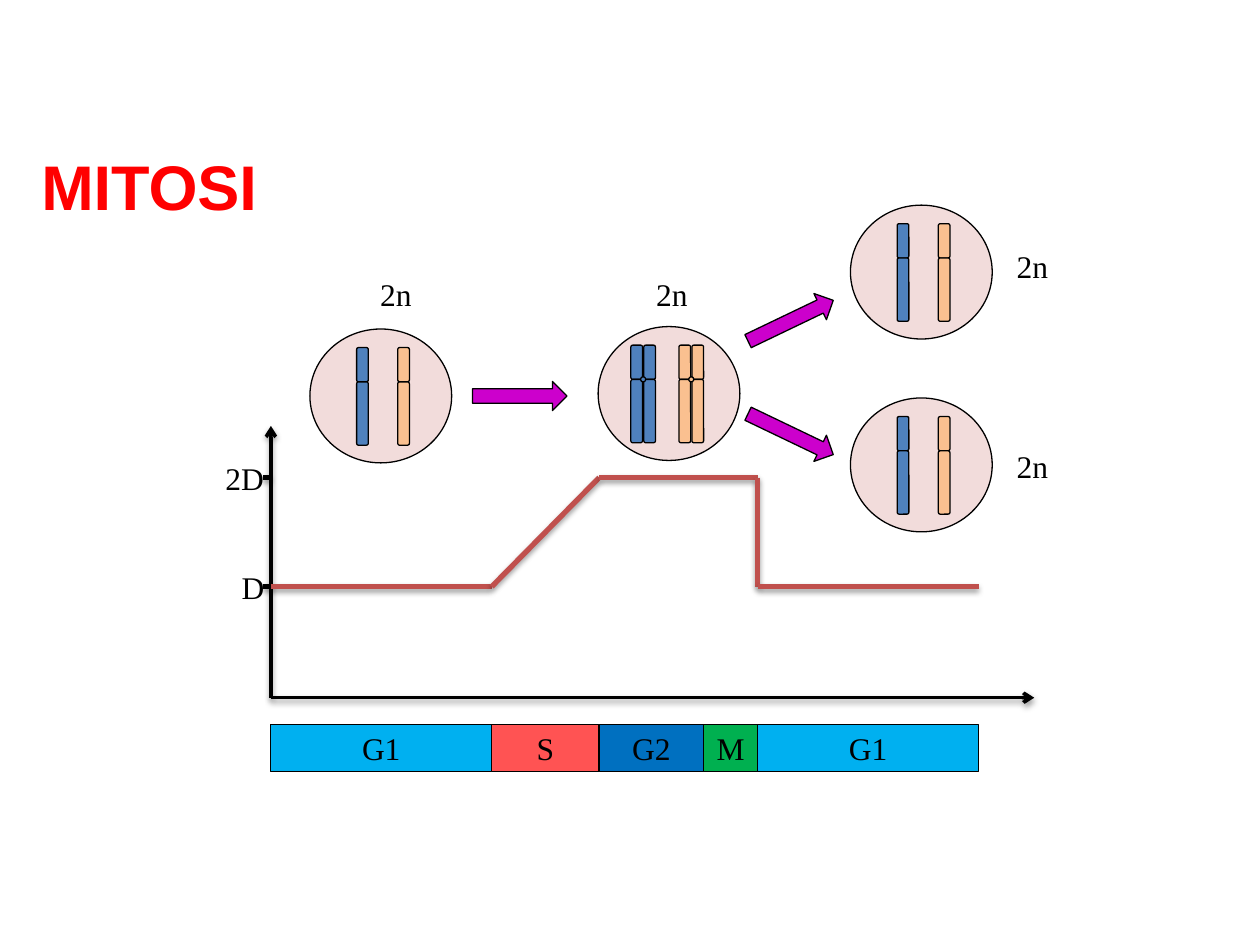
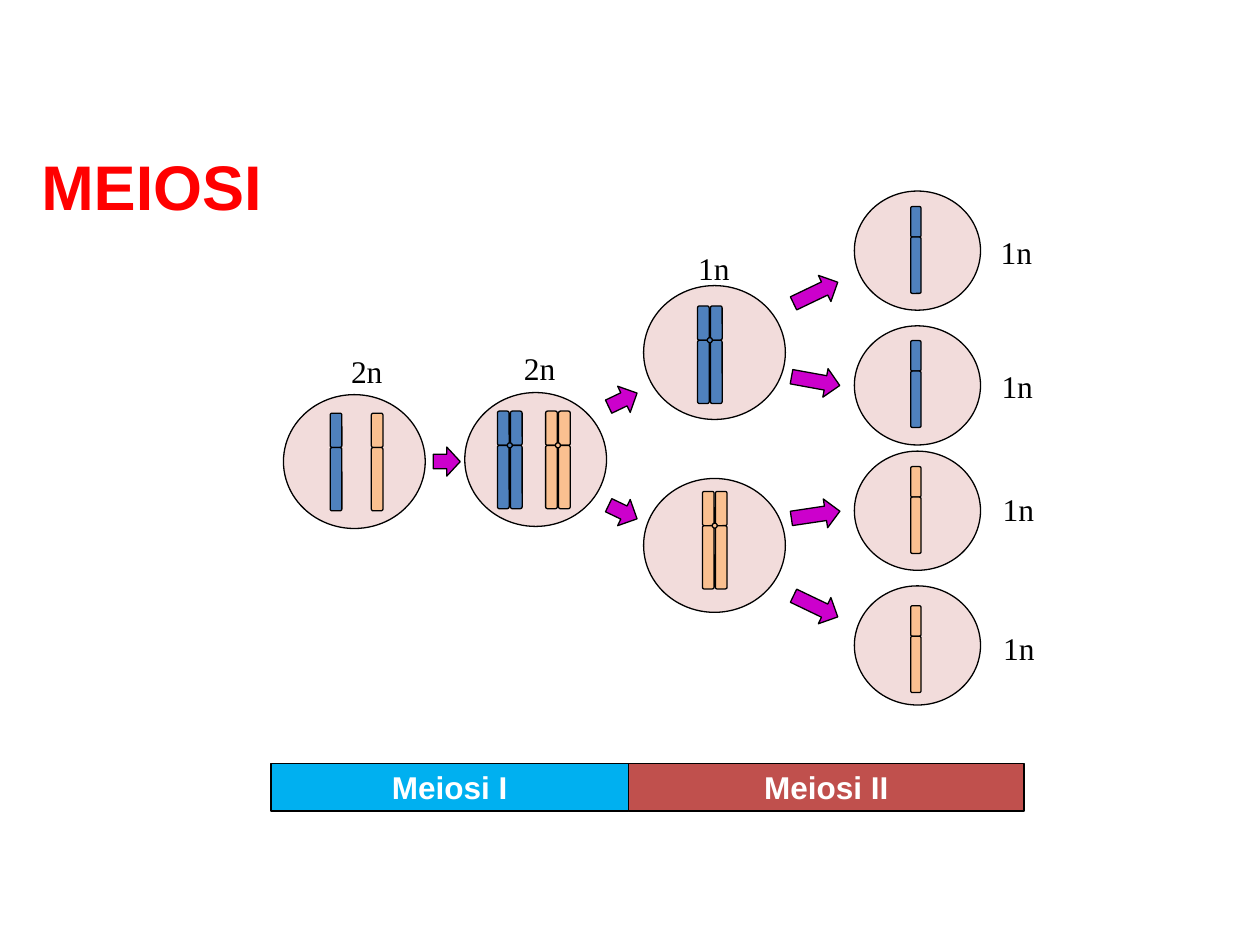
"""Build two slides comparing mitosis and meiosis."""
from itertools import pairwise

from lxml.etree import SubElement
from pptx import Presentation
from pptx.dml.color import RGBColor
from pptx.enum.shapes import MSO_CONNECTOR, MSO_SHAPE as SHAPE
from pptx.enum.text import MSO_ANCHOR as ANCHOR, MSO_AUTO_SIZE, PP_ALIGN as ALIGN
from pptx.oxml.ns import qn
from pptx.util import Pt

COLORS = {
    "black": "000000", "white": "FFFFFF", "title": "FF0000", "cell": "F2DCDB",
    "blue": "4F81BD", "orange": "FAC090", "arrow": "CC00CC", "dose": "C0504D",
    "sky": "00B0F0", "coral": "FF5353", "navy": "0070C0", "green": "00B050",
}
SERIF, SANS = "Times New Roman", "Arial"

CELL_W, CELL_H, SMALL = 81, 76.5, 0.89
CHROMATID_W, SHORT_ARM, LONG_ARM, SISTER_GAP, CENTROMERE = 6.7, 19.6, 36.2, 7.4, 2.9
ARROW_H, BAR_H = 16.6, 27

SINGLE_PAIR = [("blue", 26.7, 10.6, 1), ("orange", 50.2, 10.6, 1)]
DOUBLE_PAIR = [("blue", 18.7, 10.6, 2), ("orange", 46.2, 10.6, 2)]

MITOSIS = {
    "title": "MITOSI",
    "cells": [
        (177.1, 188, 1, SINGLE_PAIR),
        (341.8, 186.6, 1, DOUBLE_PAIR),
        (486, 117.2, 1, SINGLE_PAIR),
        (486, 227.4, 1, SINGLE_PAIR),
    ],
    "arrows": [(270, 218, 54, 0), (424.8, 175, 54, -25.6), (424.8, 239.8, 54, 25.6)],
    "ploidy": [("2n", 210.2, 153.4), ("2n", 367.9, 153.4), ("2n", 573.8, 137.5), ("2n", 573.8, 252)],
    "bar": {
        "top": 414, "edges": [154.8, 281, 342.4, 402, 433, 559.2],
        "phases": [("G1", "sky"), ("S", "coral"), ("G2", "navy"), ("M", "green"), ("G1", "sky")],
        "font": (SERIF, "black", False),
    },
}
MEIOSIS = {
    "title": "MEIOSI",
    "cells": [
        (162, 225.5, 1, SINGLE_PAIR),
        (265.6, 224.3, 1, DOUBLE_PAIR),
        (367.8, 163.2, 1, [("blue", 30.8, 11.6, 2)]),
        (367.8, 273.4, 1, [("orange", 33.6, 7.4, 2)]),
        (488.2, 109.2, SMALL, [("blue", 32.2, 8.8, 1)]),
        (488.2, 186.2, SMALL, [("blue", 32.2, 8.4, 1)]),
        (488.2, 257.8, SMALL, [("orange", 32.2, 8.8, 1)]),
        (488.2, 334.8, SMALL, [("orange", 32.2, 11.3, 1)]),
    ],
    "arrows": [
        (247.6, 255.5, 15.4, 0), (346.9, 220.2, 18, -25.6), (346.9, 284.3, 18, 25.6),
        (452.1, 159, 28, -25.6), (452.1, 209.5, 28, 10.3),
        (452.1, 285.9, 28, -8.5), (452.1, 338.2, 28, 25.6),
    ],
    "ploidy": [
        ("2n", 193.5, 197.5), ("2n", 292.3, 195.8), ("1n", 391.8, 138.5), ("1n", 564.7, 129.6),
        ("1n", 565.2, 206.4), ("1n", 565.8, 276.5), ("1n", 566.2, 356),
    ],
    "bar": {
        "top": 436.4, "edges": [154.8, 359.2, 585.2],
        "phases": [("Meiosi I", "sky"), ("Meiosi II", "dose")],
        "font": (SANS, "white", True),
    },
}
ORIGIN, AXIS_TOP, AXIS_RIGHT = (154.8, 398.7), 243.4, 591
DOSES = [("D", 335.2, 27.4), ("2D", 272.9, 36.7)]


def rgb(name):
    return RGBColor.from_string(COLORS[name])


def write(tf, text, font, size, align=ALIGN.LEFT):
    face, color, bold = font
    tf.word_wrap = False
    tf.text = text
    p = tf.paragraphs[0]
    p.alignment = align
    p.font.name, p.font.size, p.font.bold = face, Pt(size), bold
    p.font.color.rgb = rgb(color)


def add_block(shapes, kind, x, y, w, h, fill):
    sp = shapes.add_shape(kind, Pt(x), Pt(y), Pt(w), Pt(h))
    sp.shadow.inherit = False
    sp.fill.solid()
    sp.fill.fore_color.rgb = rgb(fill)
    sp.line.color.rgb = rgb("black")
    sp.line.width = Pt(0.75)
    return sp


def add_line(s, start, end, color, width, arrow=False):
    c = s.shapes.add_connector(MSO_CONNECTOR.STRAIGHT, *map(Pt, start + end))
    c.line.color.rgb = rgb(color)
    c.line.width = Pt(width)
    if arrow:
        SubElement(c.element.spPr.find(qn("a:ln")), qn("a:tailEnd"), type="arrow")


def add_label(s, text, x, y, w):
    tb = s.shapes.add_textbox(Pt(x), Pt(y), Pt(w), Pt(29))
    write(tb.text_frame, text, (SERIF, "black", False), 18)


def add_cell(s, x, y, scale, chromosomes):
    shapes = s.shapes.add_group_shape().shapes
    add_block(shapes, SHAPE.OVAL, x, y, CELL_W * scale, CELL_H * scale, "cell")
    w, short, long = (scale * n for n in (CHROMATID_W, SHORT_ARM, LONG_ARM))
    for color, dx, dy, chromatids in chromosomes:
        left, top = x + dx, y + dy
        for i in range(chromatids):
            arm_x = left + i * SISTER_GAP
            add_block(shapes, SHAPE.ROUNDED_RECTANGLE, arm_x, top, w, short, color)
            add_block(shapes, SHAPE.ROUNDED_RECTANGLE, arm_x, top + short, w, long, color)
        if chromatids == 2:
            add_block(shapes, SHAPE.OVAL, left + (SISTER_GAP + w - CENTROMERE) / 2,
                      top + short - CENTROMERE / 2, CENTROMERE, CENTROMERE, color)


def add_bar(s, top, edges, phases, font):
    for (text, fill), (left, right) in zip(phases, pairwise(edges)):
        sp = add_block(s.shapes, SHAPE.RECTANGLE, left, top, right - left, BAR_H, fill)
        sp.text_frame.vertical_anchor = ANCHOR.MIDDLE
        write(sp.text_frame, text, font, 18, ALIGN.CENTER)


def add_dose_graph(s, edges):
    x0, y0 = ORIGIN
    add_line(s, ORIGIN, (x0, AXIS_TOP), "black", 2, True)
    add_line(s, ORIGIN, (AXIS_RIGHT, y0), "black", 2, True)
    for text, y, w in DOSES:
        add_line(s, (x0, y), (x0 - 4.6, y), "black", 3)
        add_label(s, text, x0 + 3.6 - w, y - 14, w)
    low, high = (y for _, y, _ in DOSES)
    start, s_start, s_end, _, division, end = edges
    curve = [(start, low), (s_start, low), (s_end, high),
             (division, high), (division, low), (end, low)]
    for a, b in pairwise(curve):
        add_line(s, a, b, "dose", 3)


def add_slide(prs, content):
    s = prs.slides.add_slide(prs.slide_layouts[5])
    title = s.shapes.title
    title.left, title.top, title.width, title.height = map(Pt, (16.4, 80.6, 141, 51))
    tf = title.text_frame
    write(tf, content["title"], (SANS, "title", True), 36)
    tf.auto_size = MSO_AUTO_SIZE.NONE
    tf.vertical_anchor = ANCHOR.TOP
    for cell in content["cells"]:
        add_cell(s, *cell)
    for x, y, w, angle in content["arrows"]:
        add_block(s.shapes, SHAPE.RIGHT_ARROW, x, y, w, ARROW_H, "arrow").rotation = angle
    for text, x, y in content["ploidy"]:
        add_label(s, text, x, y, 32.4)
    add_bar(s, **content["bar"])
    return s


def main():
    prs = Presentation()
    prs.slide_width, prs.slide_height = Pt(720), Pt(540)
    s = add_slide(prs, MITOSIS)
    add_dose_graph(s, MITOSIS["bar"]["edges"])
    add_slide(prs, MEIOSIS)
    prs.save("out.pptx")


if __name__ == "__main__":
    main()
